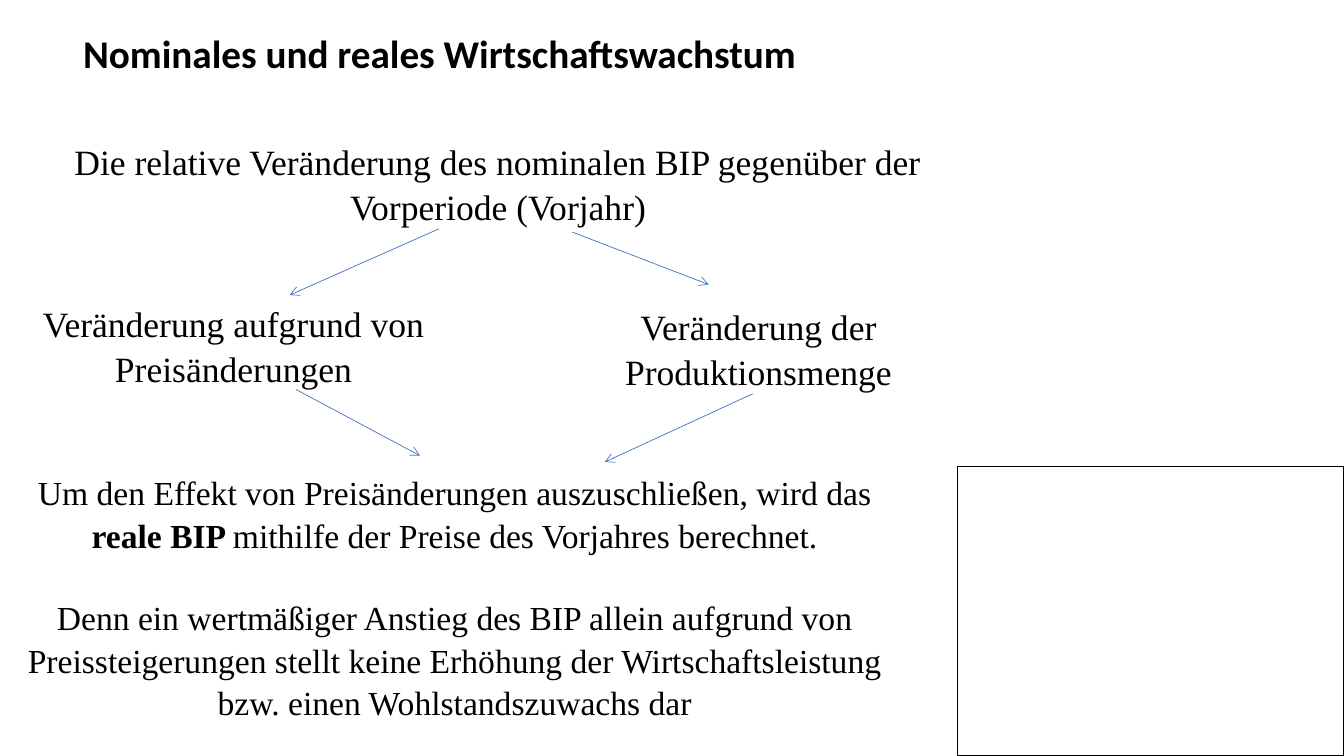
from lxml.etree import SubElement
from pptx import Presentation
from pptx.dml.color import RGBColor
from pptx.enum.shapes import MSO_CONNECTOR, MSO_SHAPE
from pptx.enum.text import MSO_ANCHOR, PP_ALIGN
from pptx.oxml.ns import qn
from pptx.util import Pt

PX = 9525
COLORS = {"text": "000000", "arrow": "4472C4", "frame": "000000"}


def color(name):
    """Return the named colour."""
    return RGBColor.from_string(COLORS[name])


def scale(*sizes):
    """Turn px into EMU."""
    return [size * PX for size in sizes]


def write(shape, *paras, size=24, font="Times New Roman", bold=False,
          anchor=MSO_ANCHOR.TOP, gap=0, lines=None):
    """Fill a shape with paragraphs; every second part of one is bold."""
    frame = shape.text_frame
    frame.word_wrap = True
    frame.vertical_anchor = anchor
    for i, parts in enumerate(paras):
        para = frame.add_paragraph() if i else frame.paragraphs[0]
        para.alignment = PP_ALIGN.CENTER
        para.line_spacing = lines
        para.space_before = Pt(gap if i else 0)
        for j, part in enumerate(parts):
            run = para.add_run()
            run.text = part
            run.font.size = Pt(size)
            run.font.name = font
            run.font.bold = bold or j % 2 == 1
            run.font.color.rgb = color("text")


def head(slide, x, y, w, h):
    """Place the title."""
    title = slide.shapes.title
    title.left, title.top, title.width, title.height = scale(x, y, w, h)
    write(title, ["Nominales und reales Wirtschaftswachstum"], size=28,
          font="Calibri", bold=True, anchor=MSO_ANCHOR.MIDDLE)


def note(slide, x, y, w, h, *paras, **style):
    """Place a text box."""
    box = slide.shapes.add_textbox(*scale(x, y, w, h))
    write(box, *paras, lines=1.05, **style)


def arrow(slide, x, y, dx, dy):
    """Draw a thin arrow from a point by an offset."""
    line = slide.shapes.add_connector(
        MSO_CONNECTOR.STRAIGHT, *scale(x, y, x + dx, y + dy))
    line.line.color.rgb = color("arrow")
    line.line.width = Pt(0.5)
    SubElement(line.line._get_or_add_ln(), qn("a:tailEnd"), type="arrow")
    SubElement(line._element.spPr, qn("a:effectLst"))


def split(slide, x, y, w):
    """Show how the change of GDP splits into prices and volume."""
    note(slide, x, y, w, 91, ["Die relative Veränderung des nominalen BIP "
         "gegenüber der Vorperiode (Vorjahr)"], size=25.4)
    note(slide, x + 8, y + 154, 425, 91,
         ["Veränderung aufgrund von Preisänderungen"], size=25.4)
    note(slide, x + 508, y + 157, 425, 91,
         ["Veränderung der Produktionsmenge"], size=25.4)
    for dx, dy, w, h in ((416, 91, -142, 63), (543, 94, 130, 50),
                         (715, 248, -141, 65), (280, 244, 118, 63)):
        arrow(slide, x + dx, y + dy, w, h)


def result(slide, x, y, w, h):
    """Place the conclusion."""
    note(slide, x, y, w, h,
         ["Um den Effekt von Preisänderungen auszuschließen, wird das ",
          "reale BIP ", "mithilfe der Preise des Vorjahres berechnet."],
         ["Denn ein wertmäßiger Anstieg des BIP allein aufgrund von "
          "Preissteigerungen stellt keine Erhöhung der Wirtschaftsleistung "
          "bzw. einen Wohlstandszuwachs dar"], gap=29)


def frame(slide, x, y, w, h):
    """Draw the empty frame."""
    box = slide.shapes.add_shape(MSO_SHAPE.RECTANGLE, *scale(x, y, w, h))
    box.shadow.inherit = False
    box.fill.background()
    box.line.color.rgb = color("frame")
    box.line.width = Pt(1)


def main():
    """Build and save the slide."""
    deck = Presentation()
    deck.slide_width, deck.slide_height = scale(1280, 720)
    slide = deck.slides.add_slide(deck.slide_layouts[5])
    head(slide, 11, 11, 815, 78)
    split(slide, 2, 127, 945)
    result(slide, 2, 443, 862, 242)
    frame(slide, 912, 444, 368, 276)
    deck.save("out.pptx")


if __name__ == "__main__":
    main()
